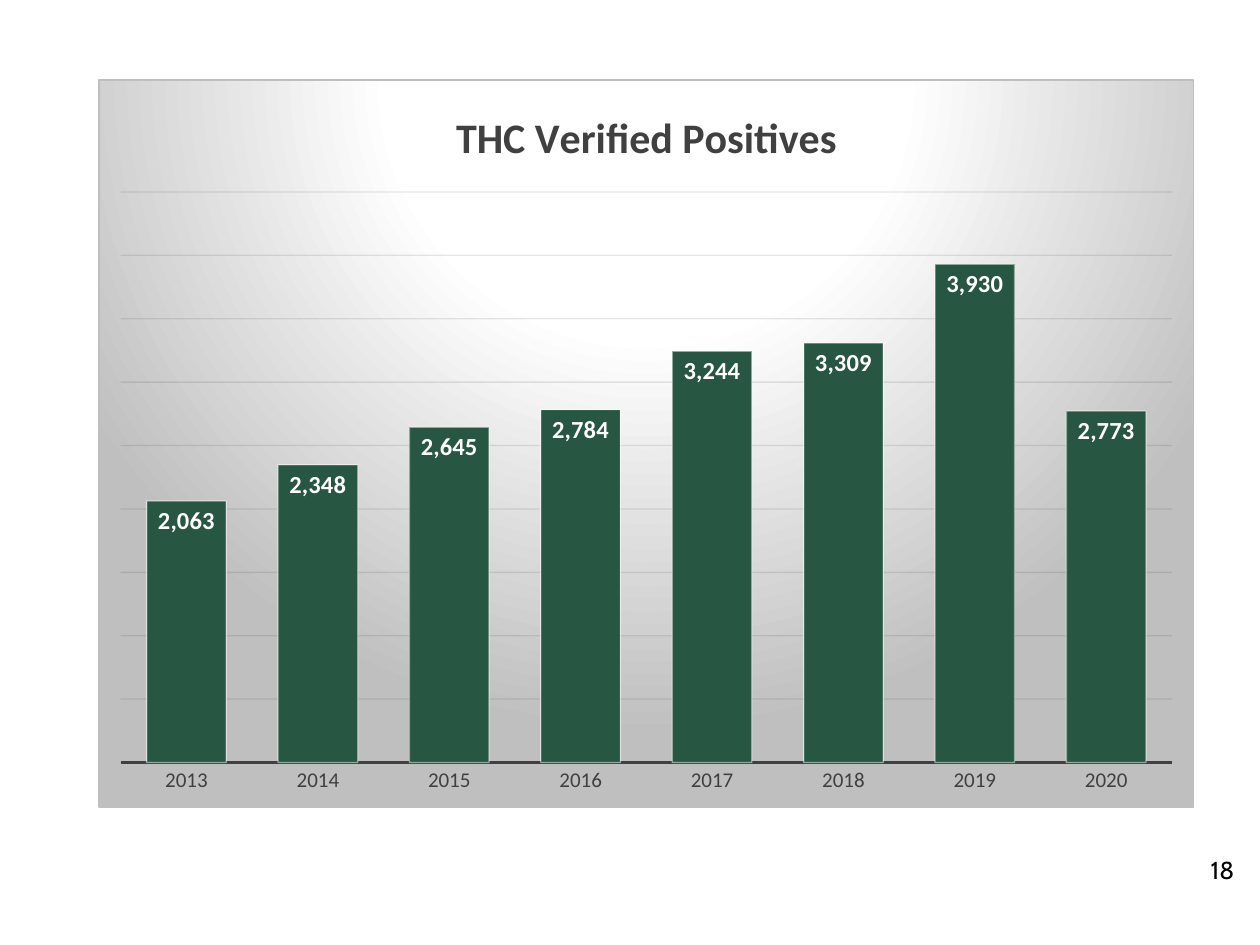
from dataclasses import dataclass

from lxml.etree import SubElement
from pptx import Presentation
from pptx.chart.data import CategoryChartData
from pptx.dml.color import RGBColor
from pptx.enum.chart import XL_CHART_TYPE, XL_LABEL_POSITION, XL_TICK_MARK
from pptx.oxml import parse_xml
from pptx.oxml.ns import nsdecls, qn
from pptx.util import Inches, Pt


@dataclass(frozen=True)
class Theme:
    chart_font: str = "Calibri"
    number_font: str = "Cabin"
    bar: str = "275642"
    dark: str = "404040"
    grid: str = "0D0D0D"
    panel: str = "BFBFBF"
    white: str = "FFFFFF"
    black: str = "000000"
    title_size: int = 24
    label_size: int = 14
    axis_size: int = 12
    base_size: int = 10
    hairline: float = 0.75
    axis_line: float = 1.5


THEME = Theme()
YEARS = [str(year) for year in range(2013, 2021)]
POSITIVES = [2063, 2348, 2645, 2784, 3244, 3309, 3930, 2773]


def style_font(font, size, color, name=THEME.chart_font, bold=False):
    font.name = name
    font.size = Pt(size)
    font.bold = bold
    font.color.rgb = RGBColor.from_string(color)


def style_line(line, color, width, opacity=100):
    line.width = Pt(width)
    line.color.rgb = RGBColor.from_string(color)
    if opacity < 100:
        clr = line.fill._xPr.find(".//" + qn("a:srgbClr"))
        SubElement(clr, qn("a:alpha")).set("val", str(opacity * 1000))


def fill_panel(chart):
    stops = [(0, THEME.white), (39, THEME.white), (100, THEME.panel)]
    gs = "".join(
        f'<a:gs pos="{pos * 1000}"><a:srgbClr val="{color}"/></a:gs>'
        for pos, color in stops
    )
    sp_pr = parse_xml(
        f'<c:spPr {nsdecls("c", "a")}>'
        f'<a:gradFill><a:gsLst>{gs}</a:gsLst><a:path path="circle">'
        '<a:fillToRect l="50000" t="-80000" r="50000" b="180000"/>'
        "</a:path></a:gradFill>"
        f'<a:ln w="{Pt(THEME.hairline)}"><a:solidFill>'
        f'<a:srgbClr val="{THEME.panel}"/></a:solidFill></a:ln></c:spPr>'
    )
    chart._chartSpace.find(qn("c:chart")).addnext(sp_pr)


def style_axes(chart):
    axis = chart.category_axis
    axis.major_tick_mark = XL_TICK_MARK.NONE
    axis.minor_tick_mark = XL_TICK_MARK.NONE
    style_font(axis.tick_labels.font, THEME.axis_size, THEME.dark)
    style_line(axis.format.line, THEME.dark, THEME.axis_line)

    axis = chart.value_axis
    axis.minimum_scale = 0
    axis.maximum_scale = 4500
    axis.major_unit = 500
    axis.has_major_gridlines = True
    style_line(axis.major_gridlines.format.line, THEME.grid, THEME.hairline, 10)
    axis.visible = False


def style_bars(plot):
    plot.gap_width = 65
    plot.vary_by_categories = False
    series = plot.series[0]
    series.format.fill.solid()
    series.format.fill.fore_color.rgb = RGBColor.from_string(THEME.bar)
    style_line(series.format.line, THEME.white, THEME.hairline, 50)
    labels = series.data_labels
    labels.show_value = True
    labels.position = XL_LABEL_POSITION.INSIDE_END
    labels.number_format = "#,##0"
    labels.number_format_is_linked = False
    style_font(labels.font, THEME.label_size, THEME.white, bold=True)


def add_bar_chart(s, title, left, top, width, height):
    data = CategoryChartData(number_format="#,##0")
    data.categories = YEARS
    data.add_series("Series 1", POSITIVES)
    chart = s.shapes.add_chart(
        XL_CHART_TYPE.COLUMN_CLUSTERED,
        Inches(left), Inches(top), Inches(width), Inches(height), data,
    ).chart
    style_font(chart.font, THEME.base_size, THEME.black)
    chart.has_legend = False
    chart.has_title = True
    p = chart.chart_title.text_frame.paragraphs[0]
    p.text = title
    style_font(p.runs[0].font, THEME.title_size, THEME.dark, bold=True)
    fill_panel(chart)
    style_axes(chart)
    style_bars(chart.plots[0])


def add_page_number(s, text, left, top, width, height):
    sp = s.shapes.add_textbox(
        Inches(left), Inches(top), Inches(width), Inches(height)
    )
    tf = sp.text_frame
    tf.word_wrap = True
    tf.text = text
    style_font(
        tf.paragraphs[0].runs[0].font,
        THEME.label_size, THEME.black, THEME.number_font,
    )


def main():
    prs = Presentation()
    prs.slide_width = Inches(10)
    prs.slide_height = Inches(7.5)
    s = prs.slides.add_slide(prs.slide_layouts[6])
    add_page_number(s, "18", 9.51, 6.74, 0.58, 0.77)
    add_bar_chart(s, "THC Verified Positives", 0.78, 0.63, 8.7, 5.78)
    prs.save("out.pptx")


if __name__ == "__main__":
    main()
